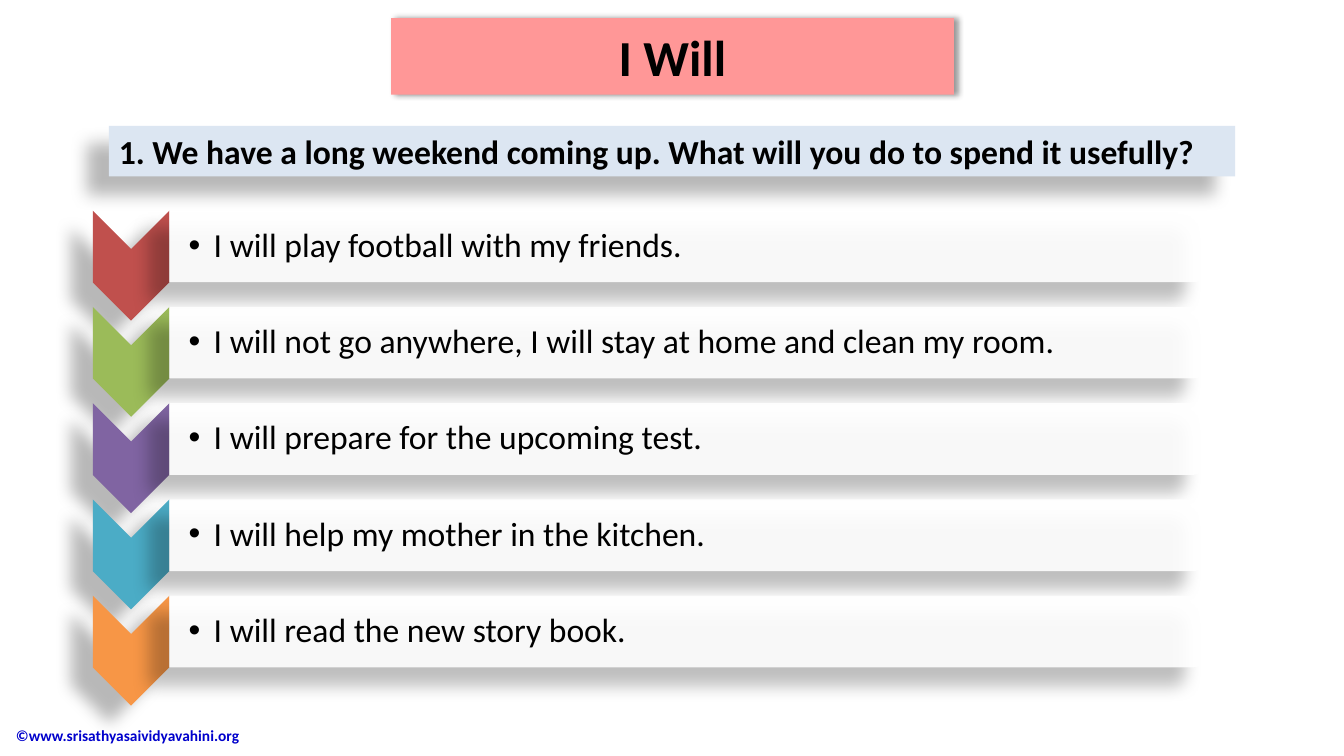
import pptx
import pptx.util
import pptx.dml.color
import pptx.enum.shapes
import pptx.enum.text
import pptx.oxml.ns
from lxml import etree

Inches = pptx.util.Inches
Pt = pptx.util.Pt
RGB = pptx.dml.color.RGBColor
SHAPE = pptx.enum.shapes.MSO_SHAPE
ALIGN = pptx.enum.text.PP_ALIGN
ANCHOR = pptx.enum.text.MSO_ANCHOR
qn = pptx.oxml.ns.qn

COLORS = {
    "title": "FF9797", "question": "DCE6F2", "bar": "FFFFFF",
    "text": "000000", "credit": "0000CC", "shadow": "000000",
    "red": "C0504D", "green": "9BBB59", "purple": "8064A2",
    "aqua": "4BACC6", "orange": "F79646",
}
TITLE = "I Will"
QUESTION = "1. We have a long weekend coming up. What will you do to spend it usefully?"
ANSWERS = [
    ("red", "I will play football with my friends."),
    ("green", "I will not go anywhere, I will stay at home and clean my room."),
    ("purple", "I will prepare for the upcoming test."),
    ("aqua", "I will help my mother in the kitchen."),
    ("orange", "I will read the new story book."),
]
CREDIT = "©www.srisathyasaividyavahini.org"

# blur (pt), distance (pt), angle (degrees), opacity (%)
DEEP = (11.8, 19.7, 141, 28)
SOFT = (4, 3, 0, 40)
ROW_TOP, ROW_STEP = 2.09, 0.955
BAR_LEFT, BAR_LONG, BAR_HIGH = 1.68, 10.28, 0.71
TIP_LEFT, TIP_LONG, TIP_WIDE = 0.92, 1.09, 0.76
TEXT_HIGH = 0.64


def sub(parent, tag, **attrs):
    return etree.SubElement(parent, qn(tag), {k: str(v) for k, v in attrs.items()})


def paint(shape, color, shade):
    """Give a shape a plain fill, no line and an outer shadow."""
    shape.fill.solid()
    shape.fill.fore_color.rgb = RGB.from_string(COLORS[color])
    shape.line.fill.background()
    shape.shadow.inherit = False
    blur, dist, angle, alpha = shade
    effects = shape.element.spPr.find(qn("a:effectLst"))
    outer = sub(effects, "a:outerShdw", blurRad=Pt(blur), dist=Pt(dist),
                dir=angle * 60000, algn="ctr", rotWithShape=0)
    tint = sub(outer, "a:srgbClr", val=COLORS["shadow"])
    sub(tint, "a:alpha", val=alpha * 1000)


def write(shape, text, size, color="text", bold=False, align=ALIGN.LEFT,
          anchor=ANCHOR.MIDDLE, bullet=False):
    frame = shape.text_frame
    frame.word_wrap = True
    frame.auto_size = pptx.enum.text.MSO_AUTO_SIZE.NONE
    frame.vertical_anchor = anchor
    para = frame.paragraphs[0]
    para.text = text
    para.alignment = align
    if bullet:
        frame.margin_left = Inches(0.19)
        frame.margin_right = frame.margin_top = frame.margin_bottom = Inches(0.02)
        para.line_spacing = 0.9
        props = para._p.get_or_add_pPr()
        props.set("marL", str(Inches(0.25)))
        props.set("indent", str(Inches(-0.25)))
        sub(props, "a:buFont", typeface="Arial")
        sub(props, "a:buChar", char="•")
    font = para.font
    font.name, font.size, font.bold = "Calibri", Pt(size), bold
    font.color.rgb = RGB.from_string(COLORS[color])


def upright(shapes, kind, left, top, wide, high):
    """Add a shape turned by 90 degrees that covers the given area."""
    shape = shapes.add_shape(
        kind, Inches(left + (wide - high) / 2), Inches(top + (high - wide) / 2),
        Inches(high), Inches(wide))
    shape.rotation = 90
    return shape


def add_title(slide):
    title = slide.shapes.title
    title.left, title.top = Inches(3.88), Inches(0.18)
    title.width, title.height = Inches(5.58), Inches(0.76)
    geom = etree.Element(qn("a:prstGeom"), prst="roundRect")
    sub(sub(geom, "a:avLst"), "a:gd", name="adj", fmla="val 50000")
    title.element.spPr.insert(1, geom)
    paint(title, "title", SOFT)
    write(title, TITLE, 36, bold=True, align=ALIGN.CENTER)


def add_row(shapes, top, color, text):
    tip = upright(shapes, SHAPE.CHEVRON, TIP_LEFT, top, TIP_WIDE, TIP_LONG)
    paint(tip, color, DEEP)
    bar = upright(shapes, SHAPE.ROUND_2_SAME_RECTANGLE,
                  BAR_LEFT, top, BAR_LONG, BAR_HIGH)
    paint(bar, "bar", DEEP)
    tint = bar.element.spPr.find(qn("a:solidFill"))[0]
    sub(tint, "a:alpha", val=90000)
    box = shapes.add_textbox(
        Inches(BAR_LEFT), Inches(top + (BAR_HIGH - TEXT_HIGH) / 2),
        Inches(BAR_LONG - 0.04), Inches(TEXT_HIGH))
    write(box, text, 24, bullet=True)


def main():
    deck = pptx.Presentation()
    deck.slide_width, deck.slide_height = Inches(13.33), Inches(7.5)
    slide = deck.slides.add_slide(deck.slide_layouts[5])
    shapes = slide.shapes
    add_title(slide)

    credit = shapes.add_textbox(Inches(0.06), Inches(7.1), Inches(3.53), Inches(0.4))
    write(credit, CREDIT, 11, "credit", bold=True)

    question = shapes.add_shape(SHAPE.RECTANGLE, Inches(1.08), Inches(1.25),
                                Inches(11.17), Inches(0.5))
    paint(question, "question", DEEP)
    write(question, QUESTION, 24, bold=True, anchor=ANCHOR.TOP)

    for i, (color, text) in enumerate(ANSWERS):
        add_row(shapes, ROW_TOP + i * ROW_STEP, color, text)
    deck.save("out.pptx")


if __name__ == "__main__":
    main()
